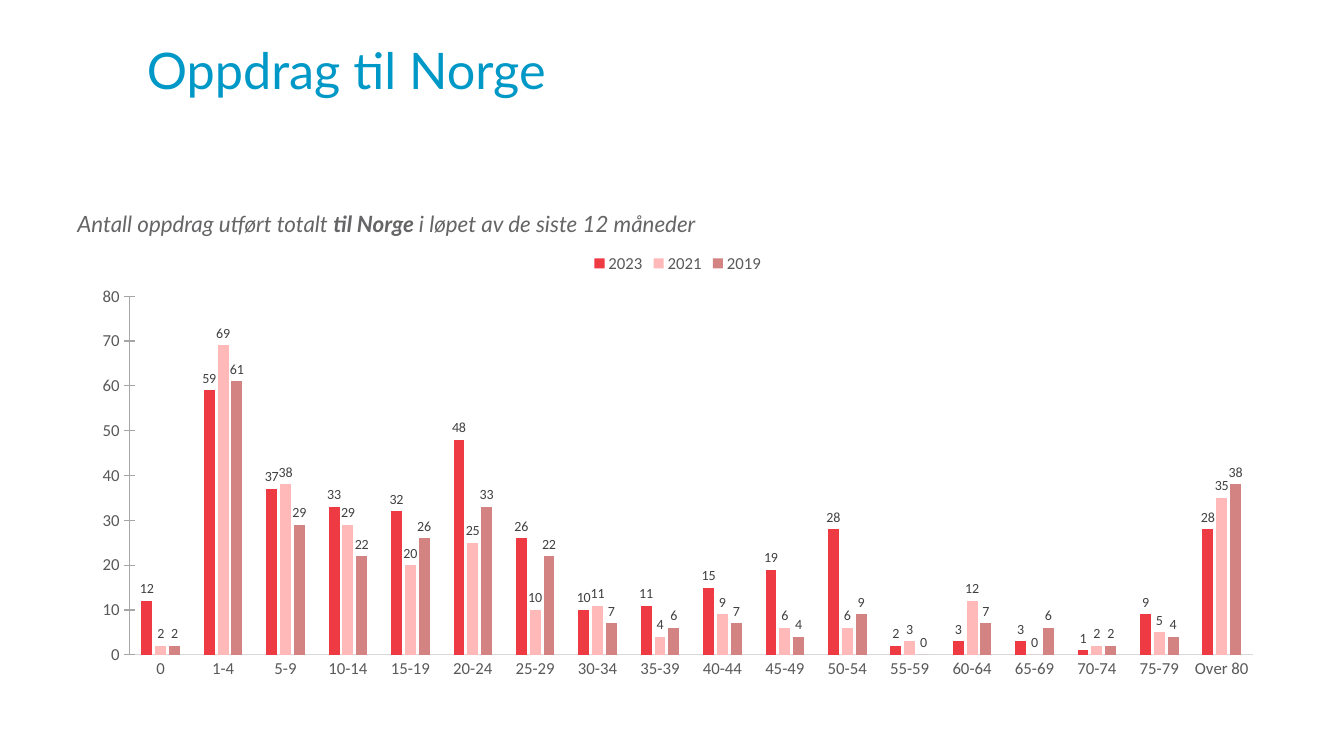
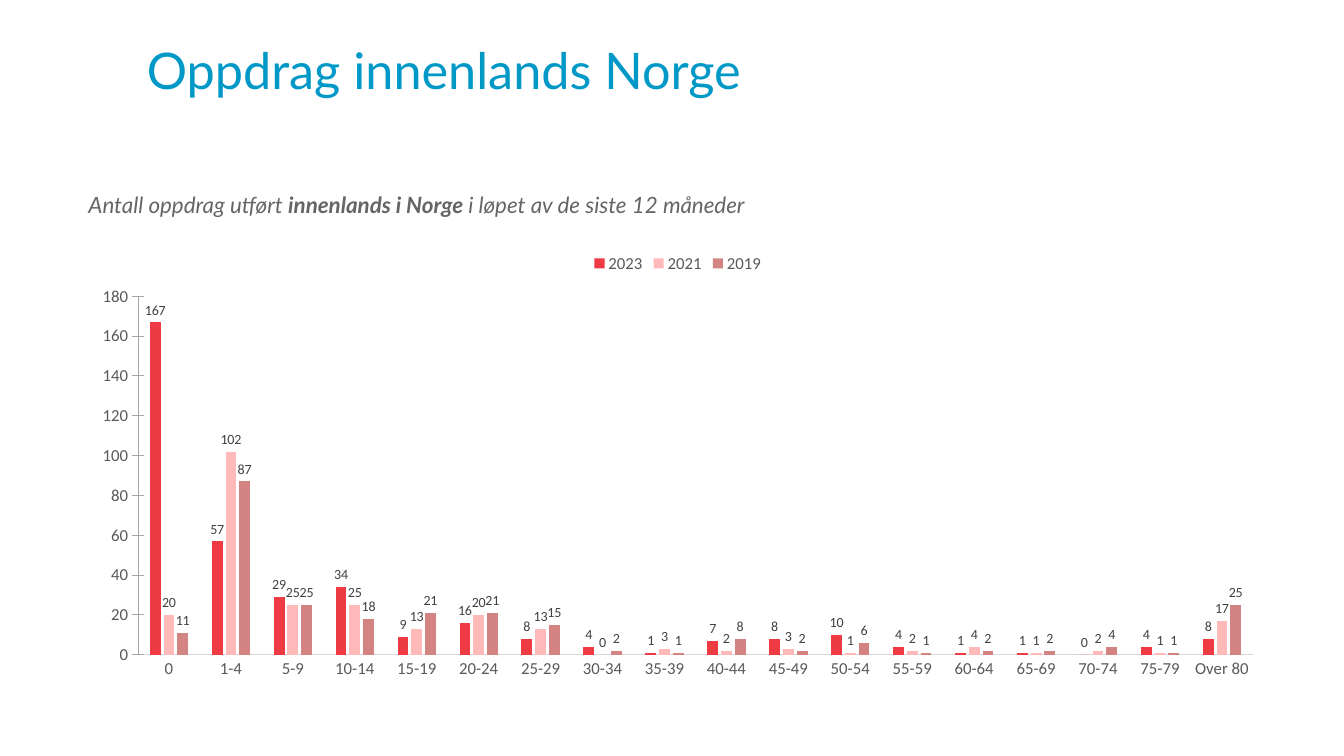
from pptx import Presentation
from pptx.chart.data import CategoryChartData
from pptx.dml.color import RGBColor
from pptx.enum.chart import XL_CHART_TYPE, XL_LABEL_POSITION, XL_LEGEND_POSITION, XL_TICK_MARK
from pptx.enum.text import MSO_ANCHOR
from pptx.util import Cm, Pt

TEXT_FONT, CHART_FONT = "Lato", "Calibri"
TITLE_COLOR, SUBTITLE_COLOR = "0098C6", "656567"
AXIS_TEXT, LABEL_TEXT = "595959", "404040"
CATEGORY_LINE, VALUE_LINE = "D9D9D9", "A6A6A6"
YEAR_COLORS = {"2023": "EE3A43", "2021": "FFB9B9", "2019": "D38381"}
AGE_GROUPS = ["0", "1-4"] + [f"{age}-{age + 4}" for age in range(5, 80, 5)] + ["Over 80"]

TITLE_AREA = (3.45, 0.15, 28.7, 3.18)
CHART_AREA = (1.98, 6.1, 30.2, 11.23)
SUBTITLE_SIZE = (30.96, 1.57)

SLIDES = [
    {
        "title": "Oppdrag til Norge",
        "subtitle": ("Antall oppdrag utført totalt ", "til Norge ", "i løpet av de siste 12 måneder"),
        "subtitle_at": (1.7, 4.52),
        "counts": {
            "2023": (12, 59, 37, 33, 32, 48, 26, 10, 11, 15, 19, 28, 2, 3, 3, 1, 9, 28),
            "2021": (2, 69, 38, 29, 20, 25, 10, 11, 4, 9, 6, 6, 3, 12, 0, 2, 5, 35),
            "2019": (2, 61, 29, 22, 26, 33, 22, 7, 6, 7, 4, 9, 0, 7, 6, 2, 4, 38),
        },
        "scale": (80, 10),
    },
    {
        "title": "Oppdrag innenlands Norge",
        "subtitle": ("Antall oppdrag utført ", "innenlands i Norge ", "i løpet av de siste 12 måneder"),
        "subtitle_at": (1.98, 4.04),
        "counts": {
            "2023": (167, 57, 29, 34, 9, 16, 8, 4, 1, 7, 8, 10, 4, 1, 1, 0, 4, 8),
            "2021": (20, 102, 25, 25, 13, 20, 13, 0, 3, 2, 3, 1, 2, 4, 1, 2, 1, 17),
            "2019": (11, 87, 25, 18, 21, 21, 15, 2, 1, 8, 2, 6, 1, 2, 2, 4, 1, 25),
        },
        "scale": (180, 20),
    },
]


def rgb(color):
    return RGBColor.from_string(color)


def style_font(font, name, size, color):
    font.name = name
    font.size = Pt(size)
    font.color.rgb = rgb(color)


def add_text(page, area, anchor, texts, size, color, italic=False):
    box = page.shapes.add_textbox(*map(Cm, area))
    box.text_frame.word_wrap = True
    box.text_frame.vertical_anchor = anchor
    para = box.text_frame.paragraphs[0]
    for position, text in enumerate(texts):
        span = para.add_run()
        span.text = text
        style_font(span.font, TEXT_FONT, size, color)
        span.font.italic = italic
        span.font.bold = position == 1


def style_axis(axis, tick, line_color):
    axis.major_tick_mark = tick
    axis.minor_tick_mark = XL_TICK_MARK.NONE
    axis.has_major_gridlines = False
    style_font(axis.tick_labels.font, CHART_FONT, 12, AXIS_TEXT)
    axis.format.line.color.rgb = rgb(line_color)
    axis.format.line.width = Pt(0.75)


def add_age_chart(page, counts, scale):
    data = CategoryChartData()
    data.categories = AGE_GROUPS
    for year, values in counts.items():
        data.add_series(year, values)
    chart = page.shapes.add_chart(XL_CHART_TYPE.COLUMN_CLUSTERED, *map(Cm, CHART_AREA), data).chart
    style_font(chart.font, CHART_FONT, 10, "000000")
    chart.has_title = False
    chart.has_legend = True
    chart.legend.position = XL_LEGEND_POSITION.TOP
    chart.legend.include_in_layout = False
    style_font(chart.legend.font, CHART_FONT, 12, AXIS_TEXT)
    style_axis(chart.category_axis, XL_TICK_MARK.NONE, CATEGORY_LINE)
    style_axis(chart.value_axis, XL_TICK_MARK.CROSS, VALUE_LINE)
    chart.value_axis.minimum_scale = 0
    chart.value_axis.maximum_scale, chart.value_axis.major_unit = scale

    plot = chart.plots[0]
    plot.gap_width = 219
    plot.overlap = -27
    plot.vary_by_categories = False
    for series in plot.series:
        series.format.fill.solid()
        series.format.fill.fore_color.rgb = rgb(YEAR_COLORS[series.name])
        series.invert_if_negative = False
        labels = series.data_labels
        labels.show_value = True
        labels.position = XL_LABEL_POSITION.OUTSIDE_END
        style_font(labels.font, CHART_FONT, 10, LABEL_TEXT)


def main():
    deck = Presentation()
    deck.slide_width, deck.slide_height = Cm(33.87), Cm(19.05)
    for content in SLIDES:
        page = deck.slides.add_slide(deck.slide_layouts[6])
        add_text(page, TITLE_AREA, MSO_ANCHOR.MIDDLE, [content["title"]], 36, TITLE_COLOR)
        add_text(page, content["subtitle_at"] + SUBTITLE_SIZE, MSO_ANCHOR.BOTTOM,
                 content["subtitle"], 16, SUBTITLE_COLOR, italic=True)
        add_age_chart(page, content["counts"], content["scale"])
    deck.save("out.pptx")


if __name__ == "__main__":
    main()
